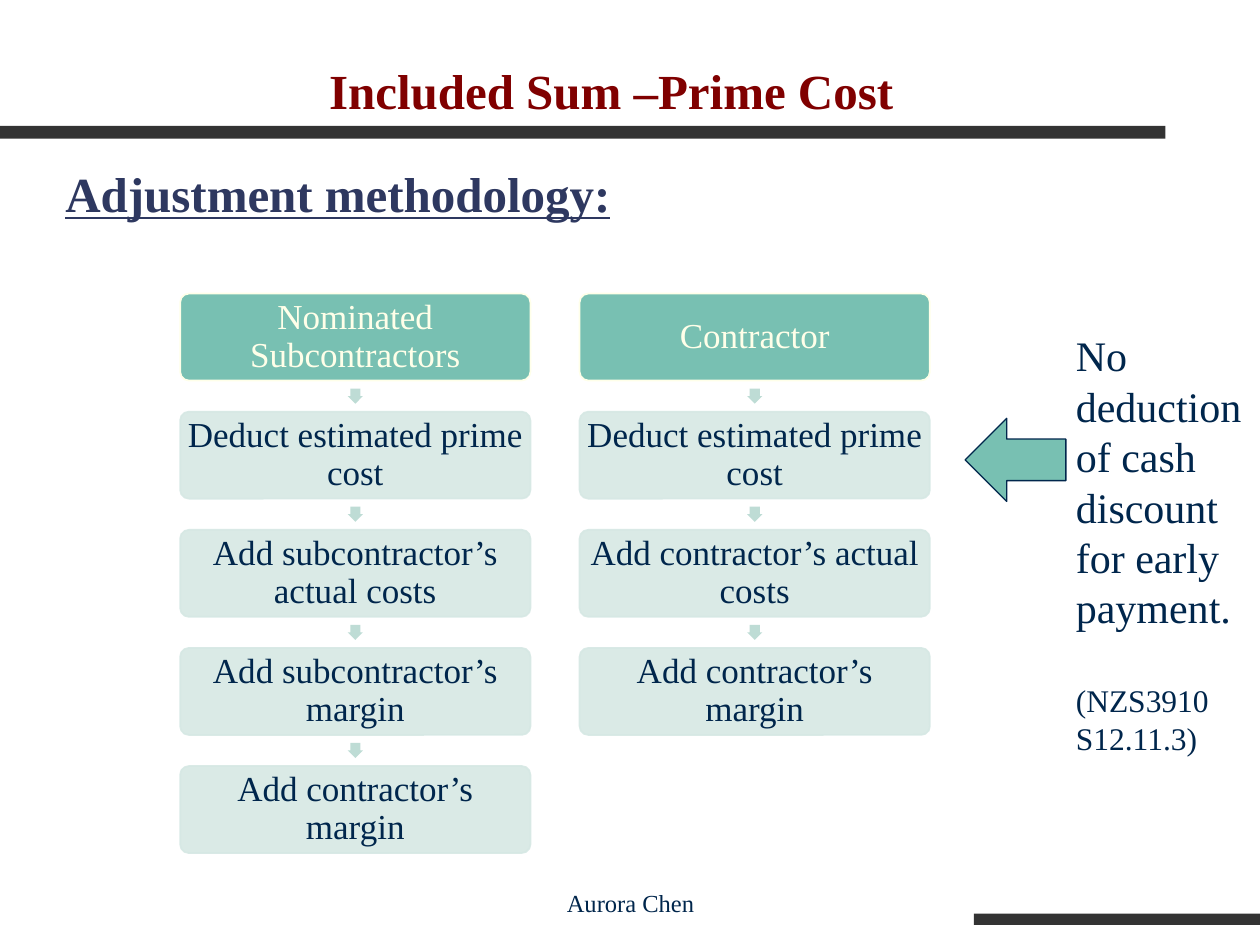
from lxml import etree
from pptx import Presentation
from pptx.dml.color import RGBColor
from pptx.enum.shapes import MSO_SHAPE
from pptx.enum.text import MSO_ANCHOR, PP_ALIGN
from pptx.oxml.ns import qn
from pptx.util import Inches, Pt

RECT, ROUNDED = MSO_SHAPE.RECTANGLE, MSO_SHAPE.ROUNDED_RECTANGLE
RIGHT_ARROW, LEFT_ARROW = MSO_SHAPE.RIGHT_ARROW, MSO_SHAPE.LEFT_ARROW
TOP, MIDDLE, BOTTOM = MSO_ANCHOR.TOP, MSO_ANCHOR.MIDDLE, MSO_ANCHOR.BOTTOM
LEFT, CENTER = PP_ALIGN.LEFT, PP_ALIGN.CENTER

BAR = RGBColor(0x33, 0x33, 0x33)
MAROON = RGBColor(0x80, 0x00, 0x00)
INDIGO = RGBColor(0x2E, 0x38, 0x60)
NAVY = RGBColor(0x00, 0x26, 0x4C)
TEAL = RGBColor(0x78, 0xC0, 0xB2)
PALE_TEAL = RGBColor(0xD6, 0xE8, 0xE4)
ARROW_TEAL = RGBColor(0xBE, 0xDC, 0xD5)
CREAM = RGBColor(0xFF, 0xFF, 0xE9)

# Grid of the two flows, in inches
FIRST_X, COLUMN_STEP = 1.43, 3.17
FIRST_Y, ROW_STEP = 2.33, 0.9375
BOX_W, BOX_H, ARROW = 2.78, 0.69, 0.12

FLOWS = [
    ["Nominated Subcontractors", "Deduct estimated prime cost",
     "Add subcontractor’s actual costs", "Add subcontractor’s margin",
     "Add contractor’s margin"],
    ["Contractor", "Deduct estimated prime cost",
     "Add contractor’s actual costs", "Add contractor’s margin"],
]

prs = Presentation()
prs.slide_width, prs.slide_height = Inches(10), Inches(7.5)
s = prs.slides.add_slide(prs.slide_layouts[6])


def add_shape(kind, x, y, w, h, fill, line=None, line_width=1):
    sp = s.shapes.add_shape(kind, Inches(x), Inches(y), Inches(w), Inches(h))
    sp.shadow.inherit = False
    sp.fill.solid()
    sp.fill.fore_color.rgb = fill
    if line is None:
        sp.line.fill.background()
    else:
        sp.line.color.rgb = line
        sp.line.width = Pt(line_width)
    return sp


def write(sp, paragraphs, color, align=LEFT, anchor=TOP):
    """Fill a shape with (text, size) paragraphs."""
    tf = sp.text_frame
    tf.word_wrap = True
    tf.vertical_anchor = anchor
    tf.text = "\n".join(text for text, size in paragraphs)
    for p, (text, size) in zip(tf.paragraphs, paragraphs):
        p.alignment = align
        p.font.name = "Times New Roman"
        p.font.size = Pt(size)
        p.font.color.rgb = color
    return tf


add_shape(RECT, 0, 1, 9.25, 0.1, BAR)
add_shape(RECT, 7.73, 7.25, 2.27, 0.09, BAR)

title = s.shapes.add_textbox(0, Inches(0.31), Inches(9.7), Inches(0.69))
tf = write(title, [("Included Sum –Prime Cost", 28)], MAROON, CENTER, BOTTOM)
tf.paragraphs[0].font.bold = True

heading = s.shapes.add_textbox(Inches(0.42), Inches(1.25), Inches(9.08), Inches(5.42))
tf = write(heading, [("Adjustment methodology:", 28)], INDIGO)
tf.paragraphs[0].font.bold = True
tf.paragraphs[0].font.underline = True

for column, steps in enumerate(FLOWS):
    x = FIRST_X + column * COLUMN_STEP
    for row, step in enumerate(steps):
        y = FIRST_Y + row * ROW_STEP
        if row:
            gap = ROW_STEP - BOX_H
            arrow = add_shape(RIGHT_ARROW, x + (BOX_W - ARROW) / 2,
                              y - (gap + ARROW) / 2, ARROW, ARROW, ARROW_TEAL)
            arrow.rotation = 90
            arrow.adjustments[0] = 0.667
            box = add_shape(ROUNDED, x, y, BOX_W, BOX_H, PALE_TEAL, PALE_TEAL)
            for color in box.element.spPr.iter(qn("a:srgbClr")):
                etree.SubElement(color, qn("a:alpha"), val="90000")
        else:
            box = add_shape(ROUNDED, x, y, BOX_W, BOX_H, TEAL, CREAM)
        box.adjustments[0] = 0.1
        tf = write(box, [(step, 20)], NAVY if row else CREAM, CENTER, MIDDLE)
        tf.margin_left = tf.margin_right = Inches(0.03)
        tf.margin_top = tf.margin_bottom = Inches(0.03)
        tf.paragraphs[0].line_spacing = 0.9

note = s.shapes.add_textbox(Inches(8.44), Inches(2.57), Inches(1.71), Inches(3.53))
tf = write(note, [("No deduction of cash discount for early payment.", 24),
                  ("(NZS3910 S12.11.3)", 18)], NAVY)
tf.paragraphs[1].space_before = Pt(28)
add_shape(LEFT_ARROW, 7.66, 3.32, 0.8, 0.66, TEAL, NAVY, 0.75)

footer = s.shapes.add_textbox(Inches(3.42), Inches(6.83), Inches(3.17), Inches(0.5))
write(footer, [("Aurora Chen", 14)], NAVY, CENTER, BOTTOM)

prs.save("out.pptx")
